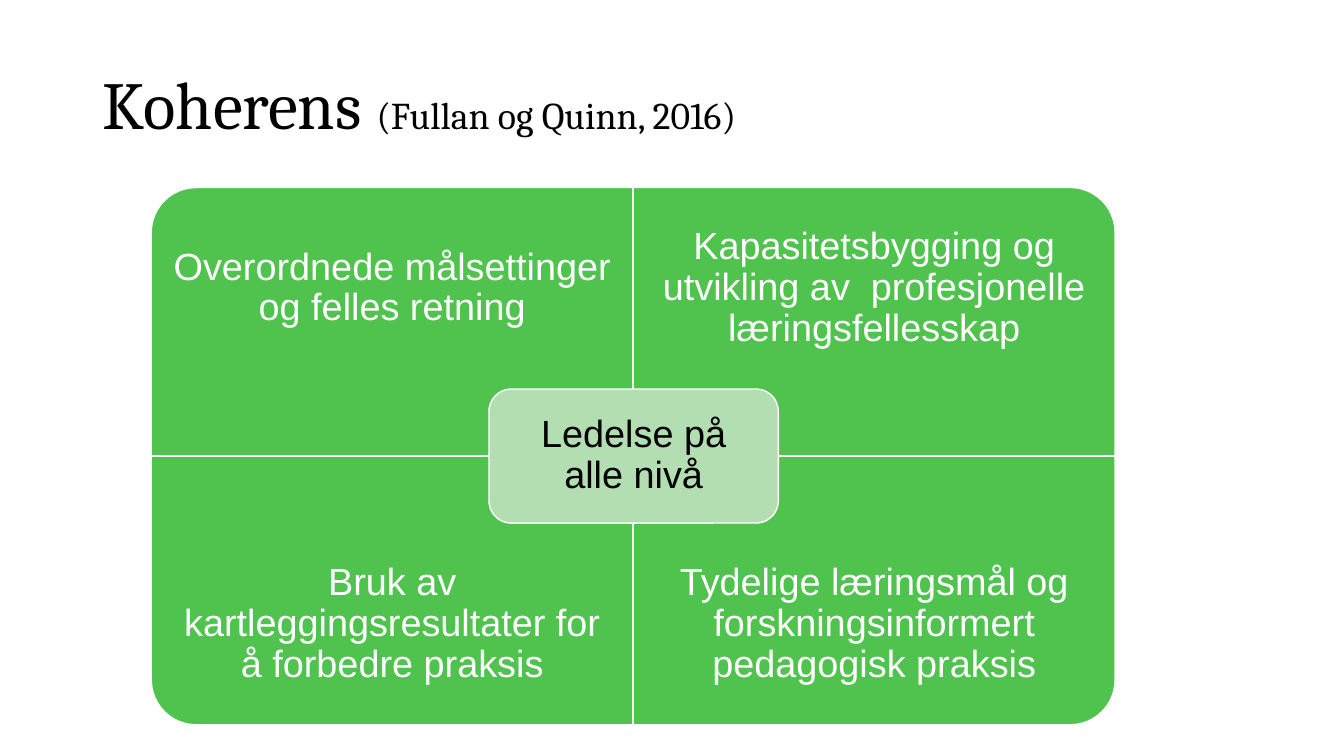
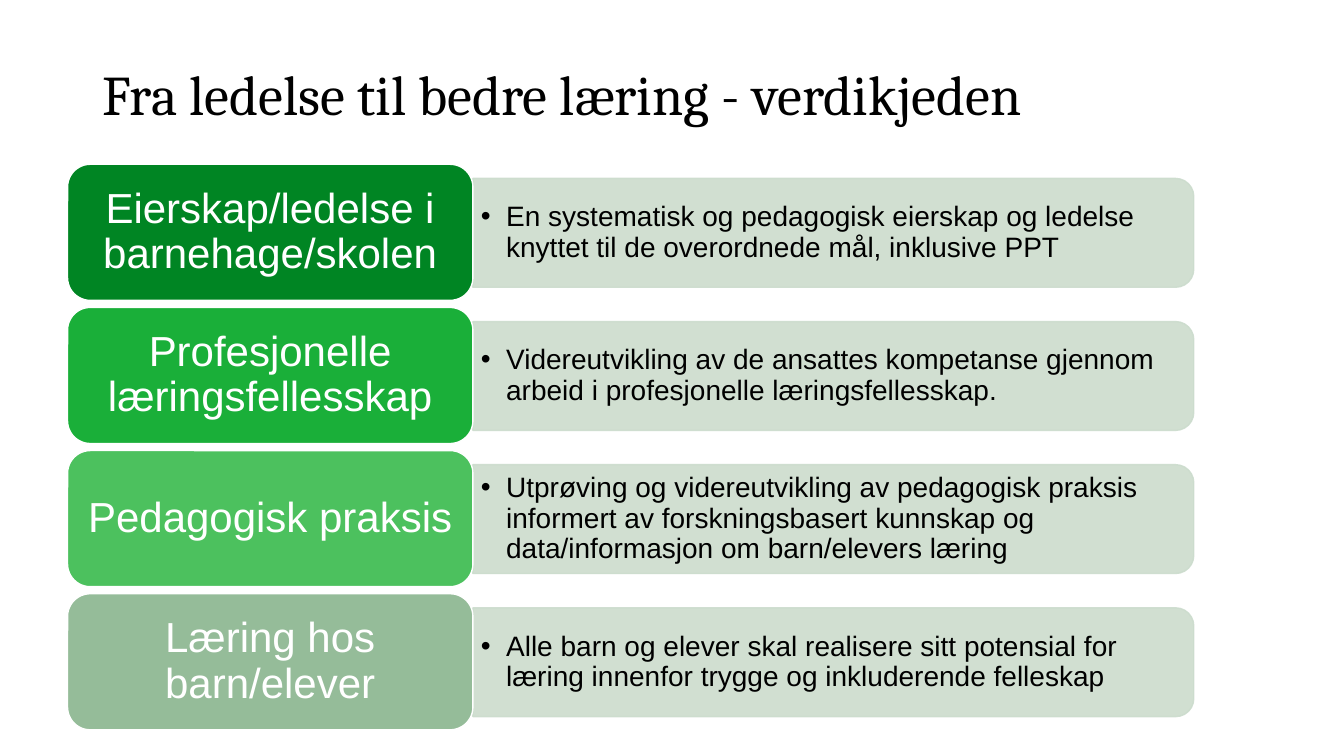
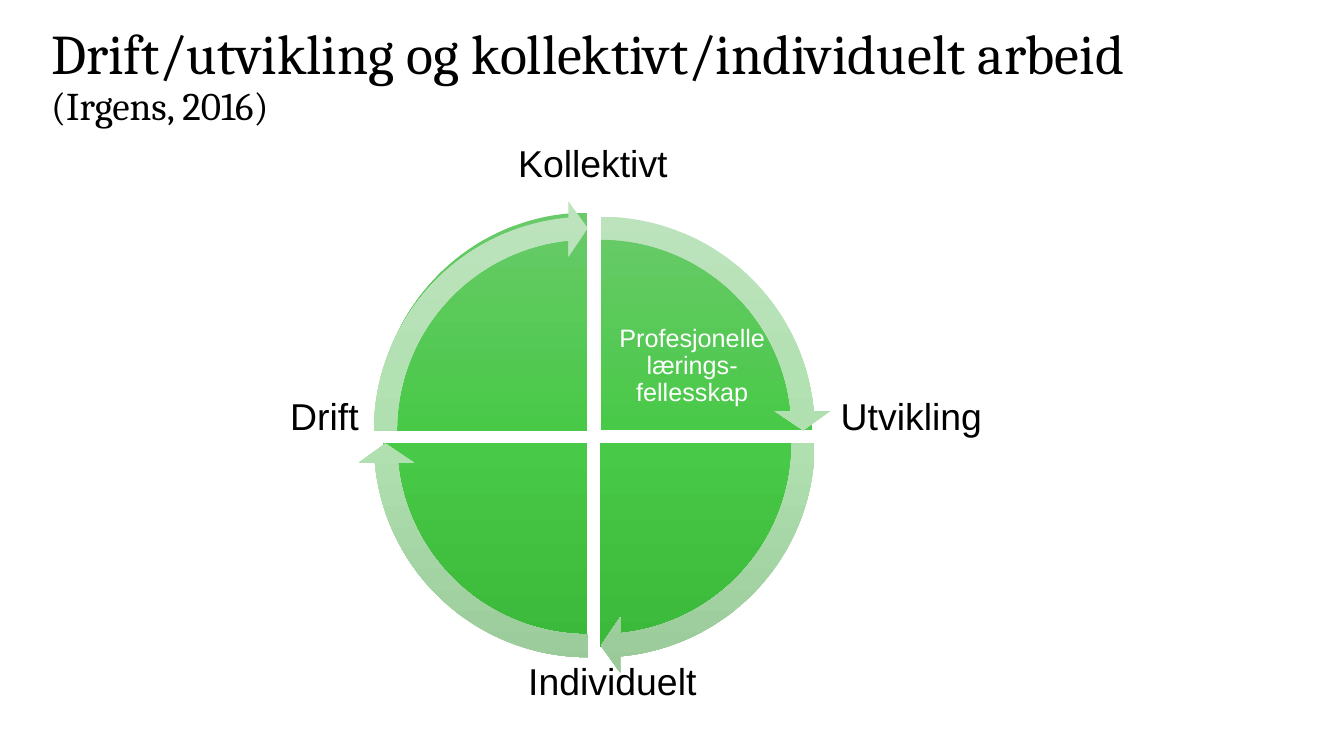
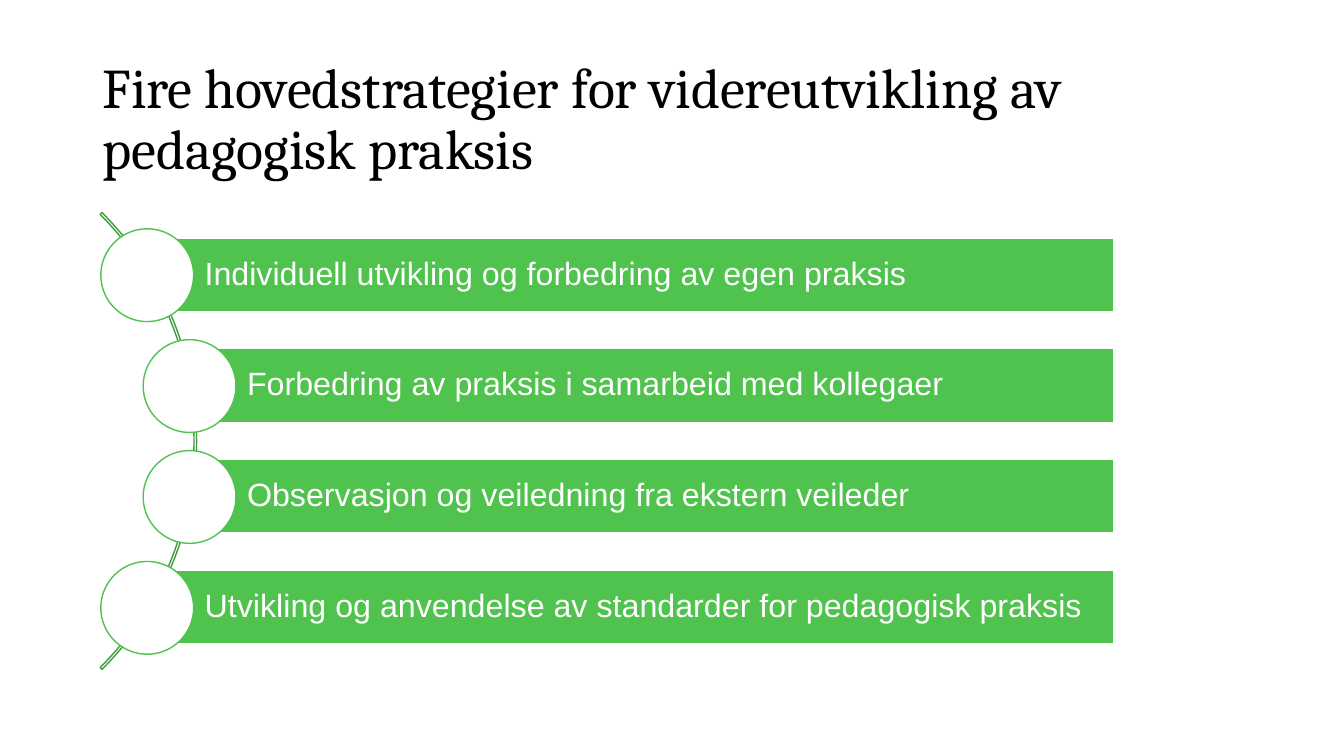
from copy import deepcopy

from lxml import etree
from pptx import Presentation
from pptx.dml.color import RGBColor
from pptx.enum.shapes import MSO_SHAPE
from pptx.enum.text import MSO_ANCHOR, PP_ALIGN
from pptx.oxml.ns import qn
from pptx.util import Inches, Pt

BLACK, WHITE, GREEN = "000000", "FFFFFF", "4FC34E"
PALE_GREEN, GREY_GREEN, DARK_GREEN = "B3DEB2", "CCDCCD", "3F9C3E"
PIE_SHADES = ("68CA68", "49C948", "3BB93A")
ARROW_SHADES = ("BDE3BD", "B0E0B0", "9ACA9A")
QUARTER = 54  # 90 degrees in adjustment units


def rgb(hex_colour):
    return RGBColor.from_string(hex_colour)


def set_alpha(solid_fill, percent):
    etree.SubElement(solid_fill[0], qn("a:alpha"), val=str(percent * 1000))


def add_bullet(paragraph, indent):
    properties = paragraph._p.get_or_add_pPr()
    properties.set("marL", str(Inches(indent)))
    properties.set("indent", str(Inches(-indent)))
    etree.SubElement(properties, qn("a:buFont"), typeface="Arial")
    etree.SubElement(properties, qn("a:buChar"), char="•")


def fill_gradient(shape, shades):
    """Fill from top to bottom with three evenly spaced shades."""
    shape.fill.gradient()
    shape.fill.gradient_angle = 270
    stops = shape._element.spPr.find(qn("a:gradFill")).find(qn("a:gsLst"))
    stops.insert(1, deepcopy(stops[0]))
    for index, (stop, shade) in enumerate(zip(shape.fill.gradient_stops, shades)):
        stop.position = index / 2
        stop.color.rgb = rgb(shade)


def write(shape, *runs, size=27, font="Arial", colour=BLACK, align=PP_ALIGN.LEFT,
          anchor=MSO_ANCHOR.MIDDLE, insets=(0.1, 0.05, 0.1, 0.05), spacing=0.9,
          bullet_indent=None):
    """Write one paragraph; a run is a text or a (text, size) pair."""
    frame = shape.text_frame
    frame.word_wrap = True
    frame.vertical_anchor = anchor
    (frame.margin_left, frame.margin_top,
     frame.margin_right, frame.margin_bottom) = map(Inches, insets)
    paragraph = frame.paragraphs[0]
    paragraph.alignment = align
    paragraph.line_spacing = spacing
    if bullet_indent:
        add_bullet(paragraph, bullet_indent)
    for part in runs:
        text, run_size = (part, size) if isinstance(part, str) else part
        run = paragraph.add_run()
        run.text = text
        run.font.name = font
        run.font.size = Pt(run_size)
        run.font.color.rgb = rgb(colour)


class Deck:
    def __init__(self):
        self.presentation = Presentation()
        self.presentation.slide_width = Inches(13.33)
        self.presentation.slide_height = Inches(7.5)
        self.slide = None

    def start_slide(self, box, *title_runs):
        self.slide = self.presentation.slides.add_slide(
            self.presentation.slide_layouts[6])
        self.text(box, *title_runs, size=40, font="Cambria",
                  anchor=MSO_ANCHOR.BOTTOM)

    def text(self, box, *runs, **style):
        write(self.slide.shapes.add_textbox(*map(Inches, box)), *runs, **style)

    def shape(self, kind, box, fill=None, line=WHITE, turn=0, alpha=None,
              adjustments=()):
        """Draw a shape that covers box after a turn in degrees."""
        left, top, width, height = box
        if turn % 180:
            left, top = left + (width - height) / 2, top + (height - width) / 2
            width, height = height, width
        shape = self.slide.shapes.add_shape(
            kind, *map(Inches, (left, top, width, height)))
        shape.shadow.inherit = False
        shape.rotation = turn
        for index, value in enumerate(adjustments):
            shape.adjustments[index] = value
        if isinstance(fill, tuple):
            fill_gradient(shape, fill)
        elif fill:
            shape.fill.solid()
            shape.fill.fore_color.rgb = rgb(fill)
        else:
            shape.fill.background()
        if line:
            shape.line.color.rgb = rgb(line)
            shape.line.width = Pt(1)
        else:
            shape.line.fill.background()
        if alpha:
            for solid in shape._element.spPr.iter(qn("a:solidFill")):
                set_alpha(solid, alpha)
        return shape

    def rounded_label(self, box, label, fill, colour=WHITE, size=27,
                      insets=(0.11,) * 4):
        node = self.shape(MSO_SHAPE.ROUNDED_RECTANGLE, box, fill)
        write(node, label, size=size, colour=colour, align=PP_ALIGN.CENTER,
              insets=insets)


def coherence(deck):
    deck.start_slide((0.92, 0, 10.2, 1.48),
                     ("Koherens ", 48), ("(Fullan og Quinn, 2016)", 27))
    left, top, width, height, label_height = 1.5, 1.86, 4.78, 2.665, 2
    quadrants = [
        (0, 0, 270, "Overordnede målsettinger og felles retning"),
        (1, 0, 0, "Kapasitetsbygging og utvikling av  profesjonelle læringsfellesskap"),
        (0, 1, 180, "Bruk av kartleggingsresultater for å forbedre praksis"),
        (1, 1, 90, "Tydelige læringsmål og forskningsinformert pedagogisk praksis"),
    ]
    for column, row, turn, label in quadrants:
        x, y = left + column * width, top + row * height
        deck.shape(MSO_SHAPE.ROUND_1_RECTANGLE, (x, y, width, height), GREEN,
                   turn=turn)
        label_top = y + row * (height - label_height)
        deck.text((x, label_top, width, label_height), label, colour=WHITE,
                  align=PP_ALIGN.CENTER, insets=(0.21,) * 4)
    deck.rounded_label((4.85, 3.86, 2.87, 1.33), "Ledelse på alle nivå",
                       PALE_GREEN, colour=BLACK)


def value_chain(deck):
    deck.start_slide((0.92, 0.4, 10.2, 0.92),
                     "Fra ledelse til bedre læring - verdikjeden")
    links = [
        ("008523", "Eierskap/ledelse i barnehage/skolen",
         "En systematisk og pedagogisk eierskap og ledelse knyttet til de "
         "overordnede mål, inklusive PPT"),
        ("1AAF39", "Profesjonelle læringsfellesskap",
         "Videreutvikling av de ansattes kompetanse gjennom arbeid i "
         "profesjonelle læringsfellesskap."),
        ("4CC15E", "Pedagogisk praksis",
         "Utprøving og videreutvikling av pedagogisk praksis informert av "
         "forskningsbasert kunnskap og data/informasjon om barn/elevers læring"),
        ("95BC99", "Læring hos barn/elever",
         "Alle barn og elever skal realisere sitt potensial for læring "
         "innenfor trygge og inkluderende felleskap"),
    ]
    for index, (fill, heading, detail) in enumerate(links):
        top = 1.63 + index * 1.42
        deck.shape(MSO_SHAPE.ROUND_2_SAME_RECTANGLE, (4.69, top + 0.14, 7.15, 1.08),
                   GREY_GREEN, line=GREY_GREEN, turn=90, alpha=90)
        deck.text((4.69, top + 0.19, 7.1, 0.98), detail, size=20,
                  insets=(0.08, 0.04, 0.08, 0.04), bullet_indent=0.25)
        deck.rounded_label((0.67, top, 4.02, 1.35), heading, fill, size=30,
                           insets=(0.12, 0.06, 0.12, 0.06))


def work_cycle(deck):
    deck.start_slide((0.41, 0.3, 11.63, 1.03),
                     "Drift/utvikling og kollektivt/individuelt arbeid ",
                     ("(Irgens, 2016)", 28))
    full_turn = 4 * QUARTER
    sectors = [
        (3 * QUARTER, (3.86, 2.24, 4.2, 4.05)),
        (0, (3.93, 2.37, 4.05, 4.05)),
        (QUARTER, (3.8, 2.37, 4.05, 4.05)),
        (2 * QUARTER, (3.72, 2.11, 4.2, 4.32)),
    ]
    for start, box in sectors:
        deck.shape(MSO_SHAPE.PIE, box, PIE_SHADES, line=None,
                   adjustments=(start, (start + QUARTER) % full_turn))
    deck.text((6.09, 3.08, 1.55, 1.11), "Profesjonelle lærings-fellesskap", size=18,
              colour=WHITE, align=PP_ALIGN.CENTER, insets=(0.03,) * 4)
    arrows = [(3 * QUARTER, 3.68, 1.99), (0, 3.68, 2.12),
              (QUARTER, 3.55, 2.12), (2 * QUARTER, 3.55, 1.99)]
    for start, left, top in arrows:
        deck.shape(MSO_SHAPE.CIRCULAR_ARROW, (left, top, 4.56, 4.56), ARROW_SHADES,
                   line=None, adjustments=(0.05, 3.28, start + 50.72, start, 0.06))
    poles = [("Drift", 2.78, 3.85, 1.36), ("Utvikling", 8.24, 3.85, 2.74),
             ("Kollektivt", 5.04, 1.34, 3.03), ("Individuelt", 5.14, 6.48, 3.1)]
    for label, left, top, width in poles:
        deck.text((left, top, width, 0.55), label, size=26.7, spacing=1.0,
                  anchor=MSO_ANCHOR.TOP)


def strategies(deck):
    deck.start_slide((0.92, 0.4, 10.2, 1.45),
                     "Fire hovedstrategier for videreutvikling av pedagogisk praksis")
    deck.shape(MSO_SHAPE.BLOCK_ARC, (-4.46, 1.17, 6.41, 6.41), line=DARK_GREEN,
               adjustments=(3.5 * QUARTER, 0.5 * QUARTER, 0.004))
    right, outer, inner = 11.05, 1.45, 1.87
    rows = [
        (outer, "Individuell utvikling og forbedring av egen praksis"),
        (inner, "Forbedring av praksis i samarbeid med kollegaer"),
        (inner, "Observasjon og veiledning fra ekstern veileder"),
        (outer, "Utvikling og anvendelse av standarder for pedagogisk praksis"),
    ]
    for index, (left, label) in enumerate(rows):
        top = 2.36 + index * 1.1
        bar = deck.shape(MSO_SHAPE.RECTANGLE, (left, top, right - left, 0.73), GREEN)
        write(bar, label, size=23, colour=WHITE, insets=(0.58, 0.06, 0.06, 0.06))
        deck.shape(MSO_SHAPE.OVAL, (left - 0.45, top - 0.09, 0.92, 0.92), WHITE,
                   line=GREEN)


def main():
    deck = Deck()
    for build in (coherence, value_chain, work_cycle, strategies):
        build(deck)
    deck.presentation.save("out.pptx")


if __name__ == "__main__":
    main()
